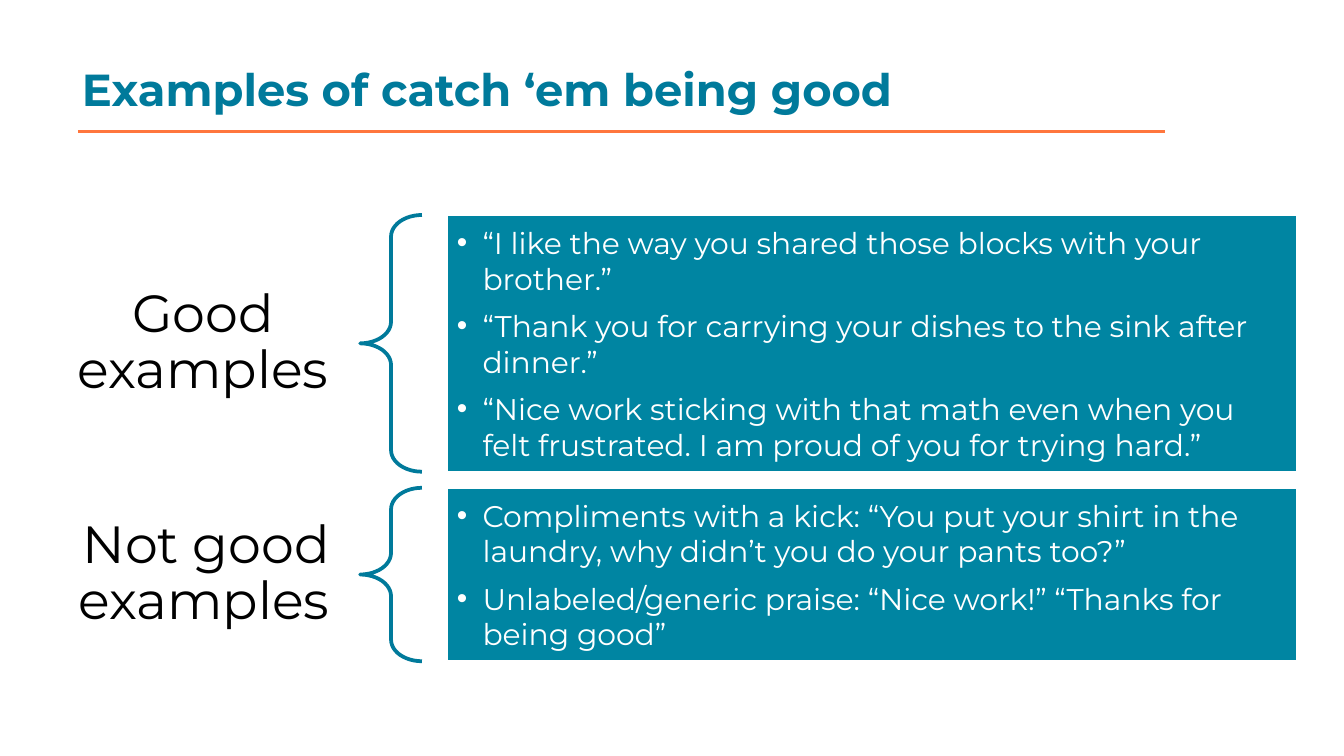
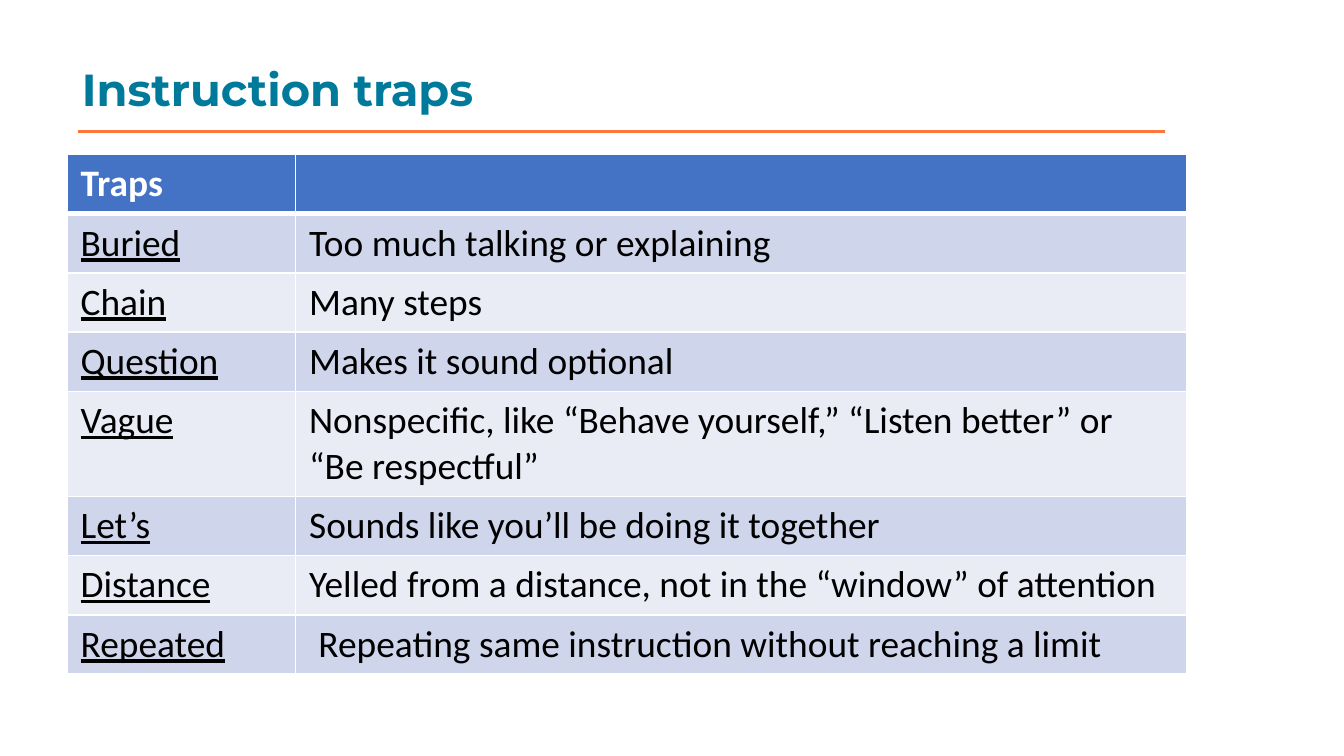
from lxml.etree import SubElement
from pptx import Presentation
from pptx.dml.color import RGBColor
from pptx.enum.shapes import MSO_CONNECTOR as Connector, MSO_SHAPE as Shape
from pptx.enum.text import MSO_ANCHOR as Anchor, MSO_AUTO_SIZE as AutoSize, PP_ALIGN as Align
from pptx.oxml.ns import qn
from pptx.util import Inches, Pt

COLORS = {
    "title": "007A9B",
    "rule": "FF763D",
    "panel": "0085A2",
    "white": "FFFFFF",
    "black": "000000",
    "header": "4472C4",
    "odd_row": "CFD5EA",
    "even_row": "E9EBF5",
}
HEADING_FONT = "Montserrat"
TABLE_FONT = "Calibri"
BULLET_FONT = "Arial"
TITLE_ONLY = 5

EXAMPLES = [
    {
        "label": "Good examples",
        "align": Align.CENTER,
        "top": 1.6,
        "height": 1.91,
        "items": [
            "“I like the way you shared those blocks with your brother.”",
            "“Thank you for carrying your dishes to the sink after dinner.”",
            "“Nice work sticking with that math even when you felt frustrated. "
            "I am proud of you for trying hard.”",
        ],
    },
    {
        "label": "Not good examples",
        "align": Align.RIGHT,
        "top": 3.63,
        "height": 1.29,
        "items": [
            "Compliments with a kick: “You put your shirt in the laundry, "
            "why didn’t you do your pants too?”",
            "Unlabeled/generic praise: “Nice work!” “Thanks for being good”",
        ],
    },
]

TRAPS = [
    ("Traps", ""),
    ("Buried", "Too much talking or explaining"),
    ("Chain", "Many steps"),
    ("Question", "Makes it sound optional"),
    ("Vague", "Nonspecific, like “Behave yourself,” “Listen better” or “Be respectful”"),
    ("Let’s", "Sounds like you’ll be doing it together"),
    ("Distance", "Yelled from a distance, not in the “window” of attention"),
    ("Repeated", "Repeating same instruction without reaching a limit"),
]


def color(name):
    """Return the named colour."""
    return RGBColor.from_string(COLORS[name])


def style_text(para, font, size, ink, bold=False, underline=False):
    """Format every run of a paragraph."""
    for span in para.runs:
        span.font.name = font
        span.font.size = Pt(size)
        span.font.color.rgb = color(ink)
        span.font.bold = bold
        span.font.underline = underline


def set_insets(box, side, edge):
    """Set the side and the top and bottom margins of a text frame or cell."""
    box.margin_left = box.margin_right = Inches(side)
    box.margin_top = box.margin_bottom = Inches(edge)


def add_bullet(para, indent):
    """Give a paragraph a hanging round bullet."""
    props = para._p.get_or_add_pPr()
    props.set("marL", str(Inches(indent)))
    props.set("indent", str(-Inches(indent)))
    SubElement(props, qn("a:buFont")).set("typeface", BULLET_FONT)
    SubElement(props, qn("a:buChar")).set("char", "•")


def add_title_page(deck, text, width):
    """Add a page with the shared title and the rule under it."""
    page = deck.slides.add_slide(deck.slide_layouts[TITLE_ONLY])
    title = page.shapes.title
    title.left, title.top = Inches(0.51), Inches(0.39)
    title.width, title.height = Inches(width), Inches(0.5)
    frame = title.text_frame
    frame.text = text
    frame.auto_size = AutoSize.NONE
    frame.vertical_anchor = Anchor.TOP
    para = frame.paragraphs[0]
    para.alignment = Align.LEFT
    para.line_spacing = Pt(30)
    style_text(para, HEADING_FONT, 24, "title", bold=True)

    rule = page.shapes.add_connector(
        Connector.STRAIGHT, Inches(0.58), Inches(0.98), Inches(8.67), Inches(0.98))
    rule.line.color.rgb = color("rule")
    rule.line.width = Pt(1.5)
    SubElement(rule._element.spPr, qn("a:effectLst"))
    return page


def add_label(shapes, text, align, left, middle):
    """Add a large label centred vertically on the given height."""
    box = shapes.add_textbox(Inches(left), Inches(middle - 0.5), Inches(2.32), Inches(1))
    frame = box.text_frame
    frame.word_wrap = True
    frame.vertical_anchor = Anchor.MIDDLE
    set_insets(frame, 0.22, 0.08)
    frame.text = text
    para = frame.paragraphs[0]
    para.alignment = align
    para.line_spacing = 0.9
    style_text(para, HEADING_FONT, 28, "black")


def add_brace(shapes, left, top, height):
    """Add the left brace that ties a label to its panel."""
    brace = shapes.add_shape(
        Shape.LEFT_BRACE, Inches(left), Inches(top), Inches(0.46), Inches(height))
    brace.shadow.inherit = False
    brace.adjustments[0] = 0.35
    brace.fill.background()
    brace.line.color.rgb = color("title")
    brace.line.width = Pt(2)


def add_panel(shapes, items, left, top, height):
    """Add a filled panel with a bulleted list."""
    panel = shapes.add_shape(
        Shape.RECTANGLE, Inches(left), Inches(top), Inches(6.32), Inches(height))
    panel.shadow.inherit = False
    panel.fill.solid()
    panel.fill.fore_color.rgb = color("panel")
    panel.line.color.rgb = color("white")
    panel.line.width = Pt(1)
    frame = panel.text_frame
    frame.word_wrap = True
    frame.vertical_anchor = Anchor.MIDDLE
    set_insets(frame, 0.07, 0.07)
    frame.text = "\n".join(items)
    for para in frame.paragraphs:
        add_bullet(para, 0.19)
        para.level = 1
        para.alignment = Align.LEFT
        para.space_after = Pt(6)
        style_text(para, HEADING_FONT, 16, "white")
    frame.paragraphs[-1].space_after = Pt(2.4)


def add_example_group(page, group, left):
    """Add one label, brace and panel as a group."""
    shapes = page.shapes.add_group_shape().shapes
    top, height = group["top"], group["height"]
    add_label(shapes, group["label"], group["align"], left, top + height / 2)
    add_brace(shapes, left + 2.33, top, height)
    add_panel(shapes, group["items"], left + 2.98, top, height)


def set_borders(cell, top, bottom):
    """Draw white cell borders with the given top and bottom widths."""
    props = cell._tc.get_or_add_tcPr()
    for side, width in (("L", 1), ("R", 1), ("T", top), ("B", bottom)):
        line = SubElement(props, qn(f"a:ln{side}"), w=str(Pt(width)))
        fill = SubElement(line, qn("a:solidFill"))
        SubElement(fill, qn("a:srgbClr"), val=COLORS["white"])


def fill_cell(cell, text, row, column):
    """Write and format one cell of the traps table."""
    header = row == 0
    set_borders(cell, 3 if row == 1 else 1, 3 if header else 1)
    cell.fill.solid()
    cell.fill.fore_color.rgb = color(
        "header" if header else "odd_row" if row % 2 else "even_row")
    cell.text = text
    style_text(cell.text_frame.paragraphs[0], TABLE_FONT, 20,
               "white" if header else "black",
               bold=header, underline=column == 0 and not header)


def add_traps_table(page, left, top):
    """Add the table of instruction traps."""
    widths, row_height = (1.7, 6.63), 0.41
    table = page.shapes.add_table(
        len(TRAPS), len(widths), Inches(left), Inches(top),
        Inches(sum(widths)), Inches(row_height * len(TRAPS))).table
    for column, width in zip(table.columns, widths):
        column.width = Inches(width)
    for row, texts in enumerate(TRAPS):
        for column, text in enumerate(texts):
            fill_cell(table.cell(row, column), text, row, column)

    last = table.cell(len(TRAPS) - 1, 1)
    set_insets(last, 0.07, 0)
    para = last.text_frame.paragraphs[0]
    para.alignment = Align.JUSTIFY
    para.line_spacing = 1.15
    para._p.get_or_add_pPr().set("marL", str(Inches(0.1)))


def build_examples(deck):
    """Build the page of good and not good examples."""
    page = add_title_page(deck, "Examples of catch ‘em being good", 6.49)
    for group in EXAMPLES:
        add_example_group(page, group, 0.35)


def build_traps(deck):
    """Build the page of instruction traps."""
    page = add_title_page(deck, "Instruction traps", 6.83)
    add_traps_table(page, 0.5, 1.15)


def main():
    """Build and save the deck in the 16:9 format."""
    deck = Presentation()
    deck.slide_width = Inches(10)
    deck.slide_height = deck.slide_width * 9 // 16
    build_examples(deck)
    build_traps(deck)
    deck.save("out.pptx")


if __name__ == "__main__":
    main()
